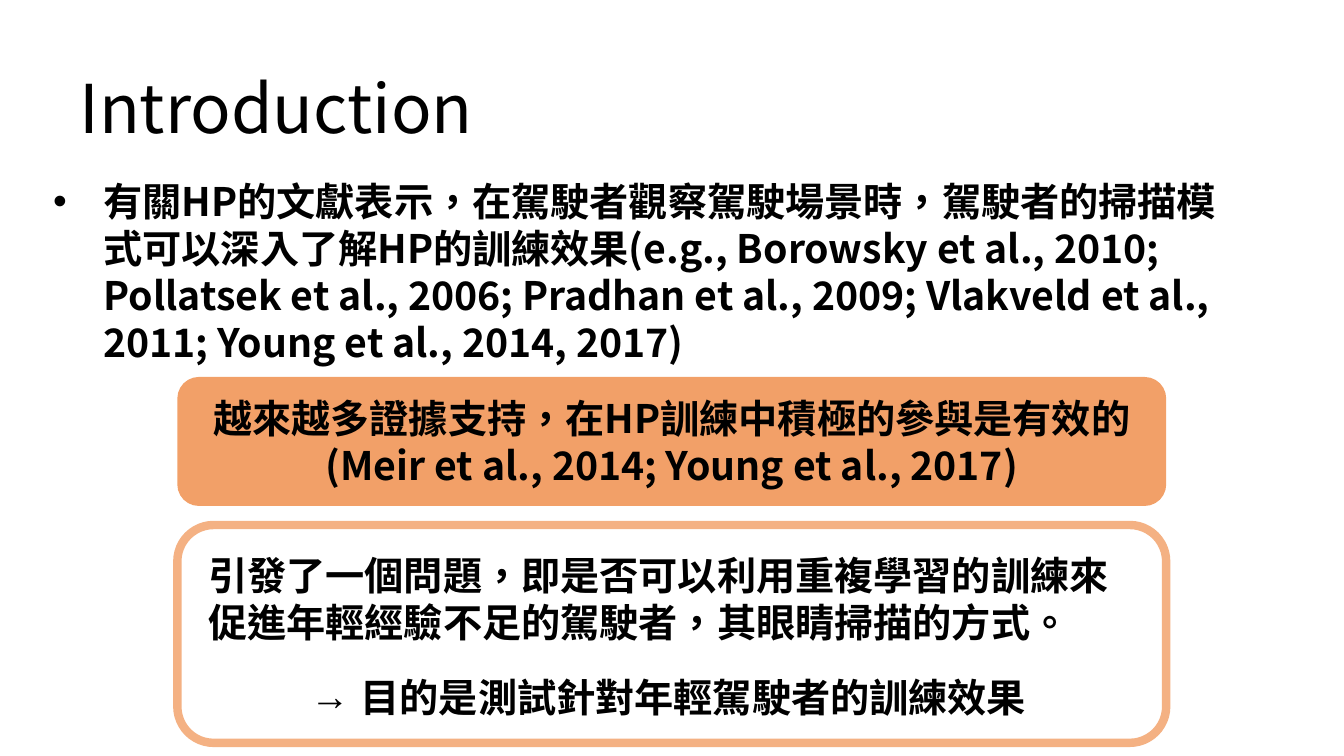
from dataclasses import dataclass
from typing import Optional

from lxml import etree
from pptx import Presentation
from pptx.dml.color import RGBColor
from pptx.enum.lang import MSO_LANGUAGE_ID
from pptx.enum.shapes import MSO_SHAPE
from pptx.enum.text import MSO_ANCHOR, MSO_AUTO_SIZE, PP_ALIGN
from pptx.oxml.ns import qn
from pptx.util import Cm, Pt

ROUNDED = MSO_SHAPE.ROUNDED_RECTANGLE
LEFT, CENTER = PP_ALIGN.LEFT, PP_ALIGN.CENTER
TOP, MIDDLE = MSO_ANCHOR.TOP, MSO_ANCHOR.MIDDLE
GROW = MSO_AUTO_SIZE.SHAPE_TO_FIT_TEXT
TAIWAN = MSO_LANGUAGE_ID.TRADITIONAL_CHINESE

FONT = "Noto Sans CJK SC"
BLACK = "000000"
INDENT = Cm(1.27)


@dataclass(frozen=True)
class Area:
    left: float
    top: float
    width: float
    height: float

    def lengths(self) -> tuple:
        return Cm(self.left), Cm(self.top), Cm(self.width), Cm(self.height)


@dataclass(frozen=True)
class Panel:
    area: Area
    fill: Optional[str] = None
    line: Optional[str] = None
    text: str = ""


@dataclass(frozen=True)
class Note:
    area: Area
    text: str
    size: int = 28
    bold: bool = True
    bullet: str = ""
    wrap: bool = True


PANELS = [
    Panel(Area(4.47, 9.5, 24.92, 3.25), fill="F2A068",
          text="越來越多證據支持，在HP訓練中積極的參與是有效的"
               "(Meir et al., 2014; Young et al., 2017)"),
    Panel(Area(4.47, 13.23, 24.92, 5.49), line="F4B183"),
]

NOTES = [
    Note(Area(1.75, 1.55, 10.85, 2.31), "Introduction",
         size=48, bold=False, wrap=False),
    Note(Area(1.09, 4.34, 29.9, 5.05),
         "有關HP的文獻表示，在駕駛者觀察駕駛場景時，駕駛者的掃描模式可以深入了解HP的訓練效果"
         "(e.g., Borowsky et al., 2010; Pollatsek et al., 2006; Pradhan et al., 2009; "
         "Vlakveld et al., 2011; Young et al., 2014, 2017)", bullet="•"),
    Note(Area(5, 13.77, 23.83, 2.64),
         "引發了一個問題，即是否可以利用重複學習的訓練來促進年輕經驗不足的駕駛者，其眼睛掃描的方式。"),
    Note(Area(7.57, 16.84, 18.75, 1.45),
         "目的是測試針對年輕駕駛者的訓練效果", bullet="→", wrap=False),
]


def color(value: str) -> RGBColor:
    return RGBColor.from_string(value)


def write(frame, text: str, *, size: int = 28, bold: bool = True,
          align=LEFT, anchor=TOP, bullet: str = "", wrap: bool = True) -> None:
    frame.word_wrap = wrap
    frame.vertical_anchor = anchor
    para = frame.paragraphs[0]
    para.alignment = align
    if bullet:
        properties = para._p.get_or_add_pPr()
        properties.set("marL", str(INDENT))
        properties.set("indent", str(-INDENT))
        etree.SubElement(properties, qn("a:buFont")).set("typeface", "Arial")
        etree.SubElement(properties, qn("a:buChar")).set("char", bullet)
    span = para.add_run()
    span.text = text
    font = span.font
    font.name, font.size, font.bold = FONT, Pt(size), bold
    font.color.rgb = color(BLACK)
    font.language_id = TAIWAN
    # East Asian characters take their own typeface
    latin = font._element.find(qn("a:latin"))
    east_asian = etree.Element(qn("a:ea"), typeface=FONT)
    latin.addnext(east_asian)


def draw_panel(page, panel: Panel) -> None:
    box = page.shapes.add_shape(ROUNDED, *panel.area.lengths())
    box.shadow.inherit = False
    if panel.fill:
        box.fill.solid()
        box.fill.fore_color.rgb = color(panel.fill)
    else:
        box.fill.background()
    if panel.line:
        box.line.color.rgb = color(panel.line)
        box.line.width = Pt(6)
    else:
        box.line.fill.background()
    if panel.text:
        write(box.text_frame, panel.text, align=CENTER, anchor=MIDDLE)


def draw_note(page, note: Note) -> None:
    box = page.shapes.add_textbox(*note.area.lengths())
    write(box.text_frame, note.text, size=note.size, bold=note.bold,
          bullet=note.bullet, wrap=note.wrap)
    box.text_frame.auto_size = GROW


def main() -> None:
    deck = Presentation()
    deck.slide_width, deck.slide_height = Cm(33.87), Cm(19.05)
    page = deck.slides.add_slide(deck.slide_layouts[6])

    # Rounded panels lie behind the text
    for panel in PANELS:
        draw_panel(page, panel)

    # Title, bullets and question
    for note in NOTES:
        draw_note(page, note)

    deck.save("out.pptx")


if __name__ == "__main__":
    main()
